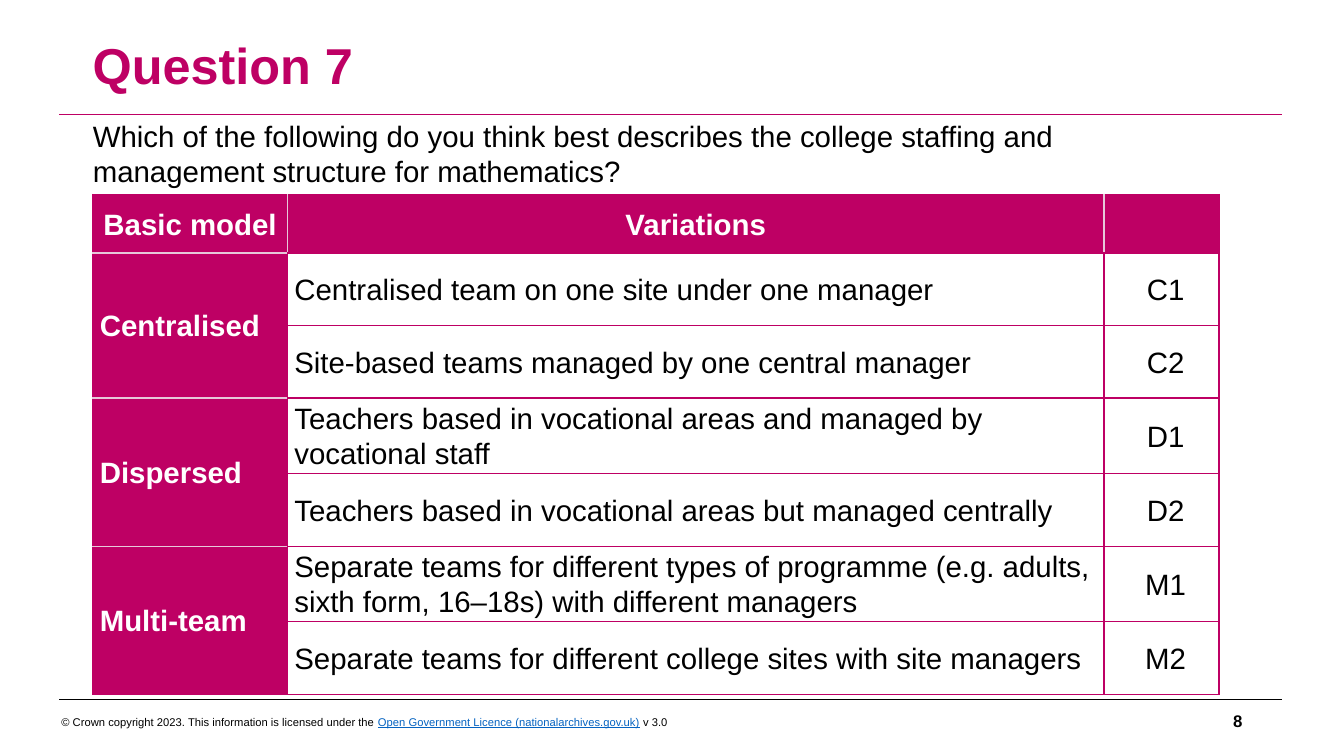
from dataclasses import dataclass

from lxml import etree
from pptx import Presentation, util as u
from pptx.dml.color import RGBColor
from pptx.enum import shapes, text
from pptx.oxml import ns

LEFT, CENTER, RIGHT = text.PP_ALIGN.LEFT, text.PP_ALIGN.CENTER, text.PP_ALIGN.RIGHT
MIDDLE, TOP = text.MSO_ANCHOR.MIDDLE, text.MSO_ANCHOR.TOP


@dataclass(frozen=True)
class Theme:
    font: str = "Arial"
    accent: str = "BE0064"
    pale: str = "E6C8D9"
    ink: str = "000000"
    paper: str = "FFFFFF"
    link: str = "0563C1"
    title: int = 36
    body: int = 21
    number: int = 12
    footer: int = 8


def write(paragraph, words, theme, size, color, bold=False, underline=False):
    run = paragraph.add_run()
    run.text = words
    run.font.name = theme.font
    run.font.size = u.Pt(size)
    run.font.bold = bold
    run.font.underline = underline
    run.font.color.rgb = RGBColor.from_string(color)


class Page:
    def __init__(self, slide, theme):
        self.slide = slide
        self.theme = theme

    def rule(self, y, color):
        line = self.slide.shapes.add_connector(
            shapes.MSO_CONNECTOR.STRAIGHT,
            u.Inches(0.59), u.Inches(y), u.Inches(12.72), u.Inches(y))
        line.line.color.rgb = RGBColor.from_string(color)
        line.line.width = u.Pt(0.75)
        etree.SubElement(line._element.spPr, ns.qn("a:effectLst"))

    def text(self, box, runs, align=LEFT, anchor=MIDDLE, inset=(0.1, 0.05), spacing=None):
        frame = self.slide.shapes.add_textbox(*map(u.Inches, box)).text_frame
        frame.word_wrap = True
        frame.vertical_anchor = anchor
        frame.margin_left = frame.margin_right = u.Inches(inset[0])
        frame.margin_top = frame.margin_bottom = u.Inches(inset[1])
        paragraph = frame.paragraphs[0]
        paragraph.alignment = align
        paragraph.line_spacing = spacing
        for words, style in runs:
            write(paragraph, words, self.theme, **style)

    def border(self, cell, colors):
        properties = cell._tc.get_or_add_tcPr()
        for place, (side, color) in enumerate(colors.items()):
            edge = etree.Element(ns.qn(f"a:ln{side}"), w=str(u.Pt(1)))
            fill = etree.SubElement(edge, ns.qn("a:solidFill"))
            etree.SubElement(fill, ns.qn("a:srgbClr"), val=color)
            properties.insert(place, edge)

    def cell(self, cell, words, filled, align):
        theme = self.theme
        cell.vertical_anchor = MIDDLE
        cell.margin_left = cell.margin_right = u.Inches(0.07)
        cell.margin_top = cell.margin_bottom = 0
        if filled:
            cell.fill.solid()
            cell.fill.fore_color.rgb = RGBColor.from_string(theme.accent)
        else:
            cell.fill.background()
        paragraph = cell.text_frame.paragraphs[0]
        paragraph.alignment = align
        paragraph.line_spacing = 1.07
        paragraph.space_after = u.Pt(8)
        if words:
            write(paragraph, words, theme, theme.body,
                  theme.paper if filled else theme.ink, bold=filled)

    def models(self, box, widths, heights, headings, models):
        rows = [headings]
        for model, variations in models:
            for place, (variation, code) in enumerate(variations):
                rows.append(("" if place else model, variation, code))
        table = self.slide.shapes.add_table(
            len(rows), len(widths), *map(u.Inches, box)).table
        table.horz_banding = table.first_row = False
        for column, width in zip(table.columns, widths):
            column.width = u.Inches(width)
        for row, height in zip(table.rows, heights):
            row.height = u.Inches(height)

        def block(r, c):
            if r == 0 and 0 <= c < len(widths):
                return "heading", c
            if c == 0 and 0 < r < len(rows):
                return "model", (r - 1) // 2
            return None

        steps = {"L": (0, -1), "R": (0, 1), "T": (-1, 0), "B": (1, 0)}
        for r, row in enumerate(rows):
            for c, words in enumerate(row):
                here = block(r, c)
                align = CENTER if r == 0 or c == 2 else LEFT
                self.cell(table.cell(r, c), words, bool(here), align)
                colors = {}
                for side, (down, across) in steps.items():
                    beyond = block(r + down, c + across)
                    divided = here and beyond and here != beyond
                    colors[side] = self.theme.pale if divided else self.theme.accent
                self.border(table.cell(r, c), colors)
        for first in range(1, len(rows), 2):
            table.cell(first, 0).merge(table.cell(first + 1, 0))


def main():
    theme = Theme()
    deck = Presentation()
    deck.slide_width, deck.slide_height = u.Inches(13.33), u.Inches(7.5)
    page = Page(deck.slides.add_slide(deck.slide_layouts[6]), theme)

    page.rule(6.94, theme.ink)
    page.rule(1.14, theme.accent)
    page.text((9.42, 6.95, 3, 0.4),
              [("8", dict(size=theme.number, color=theme.ink, bold=True))], align=RIGHT)
    question = ("Which of the following do you think best describes the college "
                "staffing and management structure for mathematics?")
    page.text((0.92, 1.17, 11.19, 0.71),
              [(question, dict(size=theme.body, color=theme.ink))],
              anchor=TOP, inset=(0, 0))

    models = [
        ("Centralised", [
            ("Centralised team on one site under one manager", " C1"),
            ("Site-based teams managed by one central manager", " C2")]),
        ("Dispersed", [
            ("Teachers based in vocational areas and managed by vocational staff", " D1"),
            ("Teachers based in vocational areas but managed centrally", " D2")]),
        ("Multi-team", [
            ("Separate teams for different types of programme (e.g. adults, "
             "sixth form, 16–18s) with different managers", " M1"),
            ("Separate teams for different college sites with site managers", " M2")]),
    ]
    page.models((0.92, 1.93, 11.17, 4.9), (1.93, 8.1, 1.14), [0.58] + [0.72] * 6,
                ("Basic model", "Variations", ""), models)

    plain = dict(size=theme.footer, color=theme.ink)
    page.text((0.51, 7.01, 8.41, 0.3), [
        ("© Crown copyright 2023. This information is licensed under the ", plain),
        ("Open Government Licence (nationalarchives.gov.uk)",
         dict(size=theme.footer, color=theme.link, underline=True)),
        (" v 3.0", plain)])
    page.text((0.82, 0.12, 8.69, 1.11),
              [("Question 7", dict(size=theme.title, color=theme.accent, bold=True))],
              spacing=0.9)
    deck.save("out.pptx")


if __name__ == "__main__":
    main()
